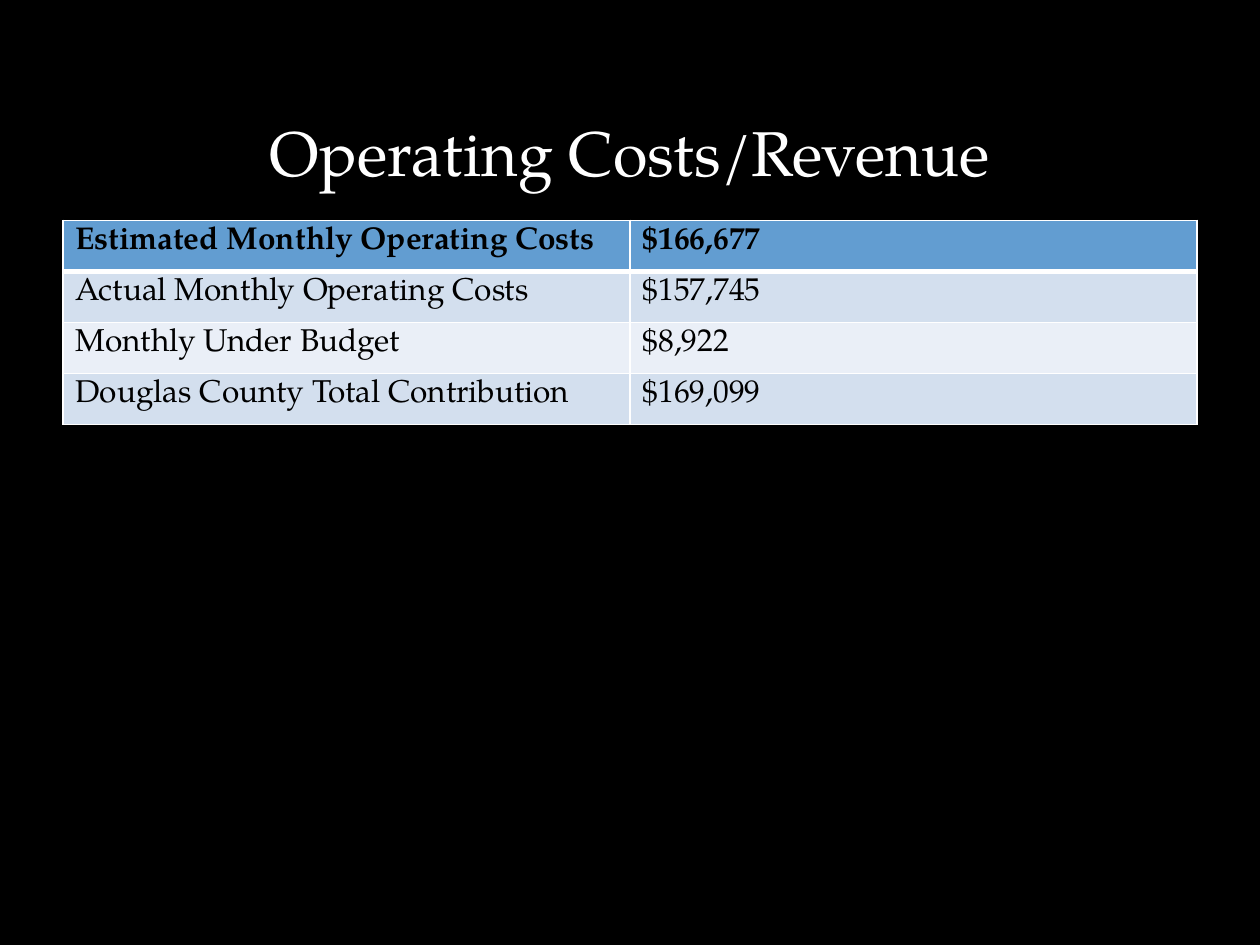
from lxml.etree import SubElement
from pptx import Presentation
from pptx.dml.color import RGBColor
from pptx.enum.text import MSO_ANCHOR, PP_ALIGN
from pptx.oxml.ns import qn
from pptx.util import Cm, Pt

# Content
HEADING = "Operating Costs/Revenue"
COSTS = [
    ("Estimated Monthly Operating Costs", "$166,677"),
    ("Actual Monthly Operating Costs", "$157,745"),
    ("Monthly Under Budget", "$8,922"),
    ("Douglas County Total Contribution", "$169,099"),
]

# Style
FONT = "TeX Gyre Pagella"
BLACK = RGBColor(0x00, 0x00, 0x00)
WHITE = RGBColor(0xFF, 0xFF, 0xFF)
HEADER_BLUE = RGBColor(0x62, 0x9D, 0xD1)
BANDS = [RGBColor(0xD3, 0xDF, 0xEE), RGBColor(0xEA, 0xEF, 0xF7)]

# Layout
MARGIN = Cm(1.27)
CONTENT_WIDTH = Cm(22.86)
ROW_HEIGHT = Cm(1.03)


def write(frame, text, size=18, color=BLACK, bold=False, align=PP_ALIGN.LEFT):
    paragraph = frame.paragraphs[0]
    paragraph.alignment = align
    run = paragraph.add_run()
    run.text = text
    run.font.name = FONT
    run.font.size = Pt(size)
    run.font.bold = bold
    run.font.color.rgb = color


def set_borders(cell, **widths):
    """Draw white cell borders; call before the fill, as the schema orders them."""
    properties = cell._tc.get_or_add_tcPr()
    for side in "LRTB":
        line = SubElement(properties, qn(f"a:ln{side}"), w=str(Pt(widths.get(side, 1))))
        fill = SubElement(line, qn("a:solidFill"))
        SubElement(fill, qn("a:srgbClr"), val=str(WHITE))


def main():
    prs = Presentation()
    prs.slide_width, prs.slide_height = Cm(25.4), Cm(19.05)
    slide = prs.slides.add_slide(prs.slide_layouts.get_by_name("Title Only"))
    slide.background.fill.solid()
    slide.background.fill.fore_color.rgb = BLACK

    # Title
    title = slide.shapes.title
    title.left, title.top = MARGIN, Cm(0.76)
    title.width, title.height = CONTENT_WIDTH, Cm(3.18)
    title.text_frame.vertical_anchor = MSO_ANCHOR.BOTTOM
    write(title.text_frame, HEADING, size=36, color=WHITE, align=PP_ALIGN.CENTER)

    # Cost table: header row, then alternating bands
    table = slide.shapes.add_table(
        len(COSTS), len(COSTS[0]), MARGIN, Cm(4.44),
        CONTENT_WIDTH, ROW_HEIGHT * len(COSTS),
    ).table
    for r, entries in enumerate(COSTS):
        is_header = r == 0
        for c, entry in enumerate(entries):
            cell = table.cell(r, c)
            set_borders(cell, T=3 if r == 1 else 1, B=3 if is_header else 1)
            cell.fill.solid()
            cell.fill.fore_color.rgb = HEADER_BLUE if is_header else BANDS[(r - 1) % 2]
            write(cell.text_frame, entry, bold=is_header)

    prs.save("out.pptx")


if __name__ == "__main__":
    main()
